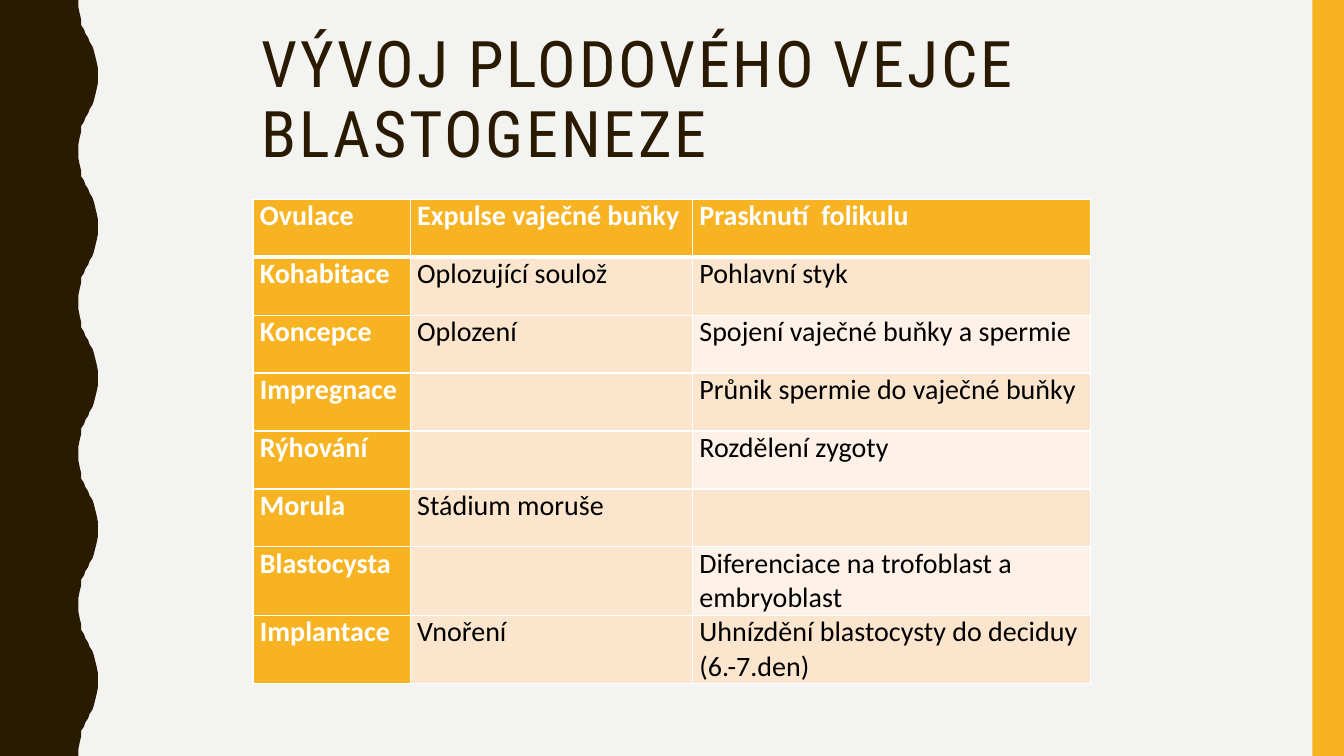
from lxml.etree import SubElement
from pptx import Presentation
from pptx.dml.color import RGBColor
from pptx.enum.shapes import MSO_SHAPE
from pptx.enum.text import MSO_ANCHOR
from pptx.oxml.ns import qn
from pptx.util import Pt

WIDE, HIGH = 960, 540
DARK, GOLD, WHITE, BLACK = "2A1A00", "F8B323", "FFFFFF", "000000"
PEACH, CREAM, PALE = "FCE5CD", "FEF2E8", "F3F3F2"

# One half wave of the left edge: (x, y) from trough to crest
HALF = [(56.2, 0), (56.2, 5), (56.9, 10), (57.6, 14.4), (58.5, 18), (59.8, 21),
        (61.2, 24), (62.8, 27), (64.4, 30), (65.8, 33), (67.2, 36),
        (68.4, 39.6), (69.4, 44), (69.9, 49), (69.9, 54)]
WAVES = 5

COLS = [112.3, 201.6, 284.6]
HEIGHTS = [41.4] * 6 + [48.8] * 2
ROWS = [
    ("Ovulace", "Expulse vaječné buňky", "Prasknutí  folikulu"),
    ("Kohabitace", "Oplozující soulož", "Pohlavní styk"),
    ("Koncepce", "Oplození", "Spojení vaječné buňky a spermie"),
    ("Impregnace", "", "Průnik spermie do vaječné buňky"),
    ("Rýhování", "", "Rozdělení zygoty"),
    ("Morula", "Stádium moruše", ""),
    ("Blastocysta", "", "Diferenciace na trofoblast a embryoblast"),
    ("Implantace", "Vnoření", "Uhnízdění blastocysty do deciduy (6.-7.den)"),
]


def paint(fill, color):
    fill.solid()
    fill.fore_color.rgb = RGBColor.from_string(color)


def write(frame, text, font="Calibri", size=20, color=BLACK, bold=False,
          track=0, lead=None):
    """Put one run of text in the frame; track and lead are in points."""
    para = frame.paragraphs[0]
    if lead:
        para.line_spacing = Pt(lead)
    run = para.add_run()
    run.text = text
    run.font.name = font
    run.font.size = Pt(size)
    run.font.bold = bold
    paint(run.font.fill, color)
    if track:
        run.font._element.set("spc", str(track * 100))


def finish(shape, color):
    shape.shadow.inherit = False
    paint(shape.fill, color)
    shape.line.fill.background()


def add_wave(slide, left, top, height):
    step = height / WAVES
    edge = []
    for wave in range(WAVES):
        base = top + wave * step
        edge += [(left + x, base + y) for x, y in HALF]
        edge += [(left + x, base + step - y) for x, y in HALF[-2::-1]]
    pen = slide.shapes.build_freeform(left, top, scale=Pt(1))
    pen.add_line_segments(edge + [(left, top + height)], close=True)
    finish(pen.convert_to_shape(), DARK)


def add_bar(slide, left, top, width, height):
    bar = slide.shapes.add_shape(MSO_SHAPE.RECTANGLE, Pt(left), Pt(top),
                                 Pt(width), Pt(height))
    finish(bar, GOLD)


def add_title(slide, left, top, width, height):
    box = slide.shapes.add_textbox(Pt(left), Pt(top), Pt(width), Pt(height))
    frame = box.text_frame
    frame.word_wrap = True
    frame.vertical_anchor = MSO_ANCHOR.TOP
    write(frame, "VÝVOJ PLODOVÉHO VEJCE BLASTOGENEZE",
          font="Roboto Condensed", size=45.9, color=DARK, track=2, lead=50)


def set_edges(cell, below):
    """Draw white borders; below is the width of the bottom one."""
    props = cell._tc.get_or_add_tcPr()
    widths = {"a:lnL": 1, "a:lnR": 1, "a:lnT": 1, "a:lnB": below}
    for tag, width in widths.items():
        line = SubElement(props, qn(tag), w=str(Pt(width)))
        solid = SubElement(line, qn("a:solidFill"))
        SubElement(solid, qn("a:srgbClr"), val=WHITE)


def shade(row, col):
    if row == 0 or col == 0:
        return GOLD
    return CREAM if col == 2 and row % 2 == 0 else PEACH


def add_grid(slide, left, top):
    grid = slide.shapes.add_table(len(ROWS), len(COLS), Pt(left), Pt(top),
                                  Pt(sum(COLS)), Pt(sum(HEIGHTS))).table
    grid.first_col = True
    for col, width in enumerate(COLS):
        grid.columns[col].width = Pt(width)
    for row, texts in enumerate(ROWS):
        grid.rows[row].height = Pt(HEIGHTS[row])
        for col, text in enumerate(texts):
            cell = grid.cell(row, col)
            cell.margin_left = cell.margin_right = Pt(5)
            cell.margin_top = cell.margin_bottom = 0
            set_edges(cell, 3 if row == 0 else 1)
            paint(cell.fill, shade(row, col))
            head = row == 0 or col == 0
            if text:
                write(cell.text_frame, text, bold=head,
                      color=WHITE if head else BLACK)


def main():
    deck = Presentation()
    deck.slide_width, deck.slide_height = Pt(WIDE), Pt(HIGH)
    slide = deck.slides.add_slide(deck.slide_layouts[6])
    paint(slide.background.fill, PALE)
    add_wave(slide, 0, 0, HIGH)
    add_bar(slide, 937.5, 0, 22.5, HIGH)
    add_title(slide, 180, 18, 612, 90)
    add_grid(slide, 180.7, 142.3)
    deck.save("out.pptx")


if __name__ == "__main__":
    main()
